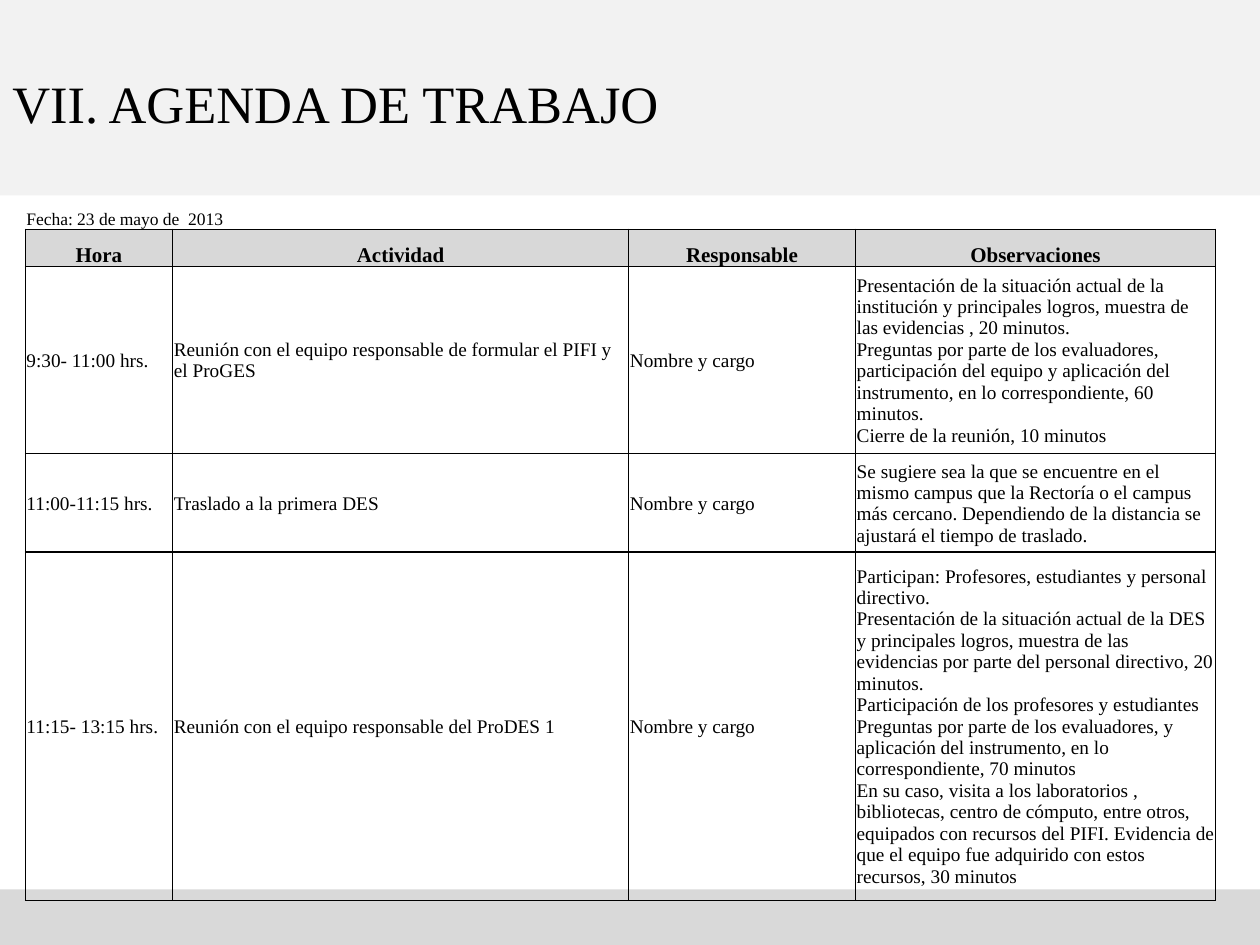
from lxml import etree
from pptx import Presentation
from pptx.dml.color import RGBColor
from pptx.enum.shapes import MSO_SHAPE
from pptx.enum.text import MSO_ANCHOR, PP_ALIGN
from pptx.oxml.ns import qn
from pptx.util import Inches, Pt

RECTANGLE = MSO_SHAPE.RECTANGLE
MIDDLE, BOTTOM = MSO_ANCHOR.MIDDLE, MSO_ANCHOR.BOTTOM
LEFT, CENTER = PP_ALIGN.LEFT, PP_ALIGN.CENTER

COLUMN_WIDTHS = [1.17, 3.62, 1.8, 2.86]
HEADINGS = ["Hora", "Actividad", "Responsable", "Observaciones"]
DATE = "Fecha: 23 de mayo de  2013"
OWNER = "Nombre y cargo"
MORNING = [
    ("9:30- 11:00 hrs.",
     "Reunión con el equipo responsable de formular el PIFI y el ProGES",
     OWNER,
     "Presentación de la situación actual de la institución y principales logros, "
     "muestra de las evidencias , 20 minutos.\n"
     "Preguntas por parte de los evaluadores, participación del equipo y aplicación "
     "del instrumento, en lo correspondiente, 60 minutos.\n"
     "Cierre de la reunión, 10 minutos"),
    ("11:00-11:15 hrs.",
     "Traslado a la primera DES",
     OWNER,
     "Se sugiere sea la que se encuentre en el mismo campus que la Rectoría o el campus "
     "más cercano. Dependiendo de la distancia se ajustará el tiempo de traslado."),
]
MIDDAY = [
    ("11:15- 13:15 hrs.",
     "Reunión con el equipo responsable del ProDES 1",
     OWNER,
     "Participan: Profesores, estudiantes y personal directivo.\n"
     "Presentación de la situación actual de la DES y principales logros, muestra de las "
     "evidencias por parte del personal directivo, 20 minutos.\n"
     "Participación de los profesores y estudiantes Preguntas por parte de los evaluadores, "
     "y aplicación del instrumento, en lo correspondiente, 70 minutos\n"
     "En su caso, visita a los laboratorios , bibliotecas, centro de cómputo, entre otros, "
     "equipados con recursos del PIFI. Evidencia de que el equipo fue adquirido con estos "
     "recursos, 30 minutos"),
]


def rgb(hex_color):
    return RGBColor.from_string(hex_color)


def write(frame, text, size=11, bold=False, align=LEFT, font="Times New Roman", color="000000"):
    """Write one paragraph per line of text."""
    for index, line in enumerate(text.split("\n")):
        paragraph = frame.add_paragraph() if index else frame.paragraphs[0]
        paragraph.alignment = align
        if not line:
            # An empty cell keeps a small font so that its row stays low
            etree.SubElement(paragraph._p, qn("a:endParaRPr"), sz=str(size * 100))
            continue
        run = paragraph.add_run()
        run.text = line
        run.font.name, run.font.size, run.font.bold = font, Pt(size), bold
        run.font.color.rgb = rgb(color)


class AgendaSlide:
    BORDER, BORDER_WIDTH = "000000", 0.5

    def __init__(self, presentation):
        self.slide = presentation.slides.add_slide(presentation.slide_layouts[6])

    def band(self, top, height, color):
        band = self.slide.shapes.add_shape(
            RECTANGLE, 0, Inches(top), Inches(10), Inches(height))
        band.shadow.inherit = False
        band.fill.solid()
        band.fill.fore_color.rgb = rgb(color)
        band.line.fill.background()

    def title(self, text, top, height):
        title = self.slide.shapes.add_textbox(0, Inches(top), Inches(10), Inches(height))
        title.text_frame.word_wrap = True
        title.text_frame.vertical_anchor = MIDDLE
        write(title.text_frame, text, size=30)

    def table(self, top, row_heights):
        frame = self.slide.shapes.add_table(
            len(row_heights), len(COLUMN_WIDTHS), Inches(0.2), Inches(top),
            Inches(sum(COLUMN_WIDTHS)), Inches(sum(row_heights)))
        table = frame.table
        table.first_row = table.horz_banding = False
        for column, width in zip(table.columns, COLUMN_WIDTHS):
            column.width = Inches(width)
        for row, height in zip(table.rows, row_heights):
            row.height = Inches(height)
        return table

    def row(self, table, index, texts, anchor=MIDDLE, sides="LRTB", fill=None, **style):
        for column, text in enumerate(texts):
            cell = table.cell(index, column)
            cell.margin_left = cell.margin_right = cell.margin_top = Inches(0.01)
            cell.margin_bottom = 0
            cell.vertical_anchor = anchor
            write(cell.text_frame, text, **style)
            self.borders(cell, sides)
            if fill:
                cell.fill.solid()
                cell.fill.fore_color.rgb = rgb(fill)
            else:
                cell.fill.background()

    def borders(self, cell, sides):
        properties = cell._tc.get_or_add_tcPr()
        for side in "LRTB":
            line = etree.SubElement(
                properties, qn("a:ln" + side), w=str(Pt(self.BORDER_WIDTH)))
            if side in sides:
                solid = etree.SubElement(line, qn("a:solidFill"))
                etree.SubElement(solid, qn("a:srgbClr"), val=self.BORDER)
            else:
                etree.SubElement(line, qn("a:noFill"))


def main():
    presentation = Presentation()
    presentation.slide_width, presentation.slide_height = Inches(10), Inches(7.5)
    agenda = AgendaSlide(presentation)

    # Header and footer bands, title
    agenda.band(0, 1.55, "F2F2F2")
    agenda.band(7.06, 0.44, "D9D9D9")
    agenda.title("VII. AGENDA DE TRABAJO", 0.07, 1.49)

    # Date, headings and first sessions
    morning = agenda.table(1.64, [0.16, 0.3, 1.48, 0.79])
    agenda.row(morning, 0, [DATE, "", "", ""], anchor=BOTTOM, sides="B", size=10)
    morning.cell(0, 0).merge(morning.cell(0, 1))
    agenda.row(morning, 1, HEADINGS, anchor=BOTTOM, fill="D8D8D8",
               size=12, bold=True, align=CENTER)
    for index, session in enumerate(MORNING, start=2):
        agenda.row(morning, index, session)

    # Last session
    midday = agenda.table(4.38, [2.57])
    for index, session in enumerate(MIDDAY):
        agenda.row(midday, index, session)

    presentation.save("out.pptx")


if __name__ == "__main__":
    main()
